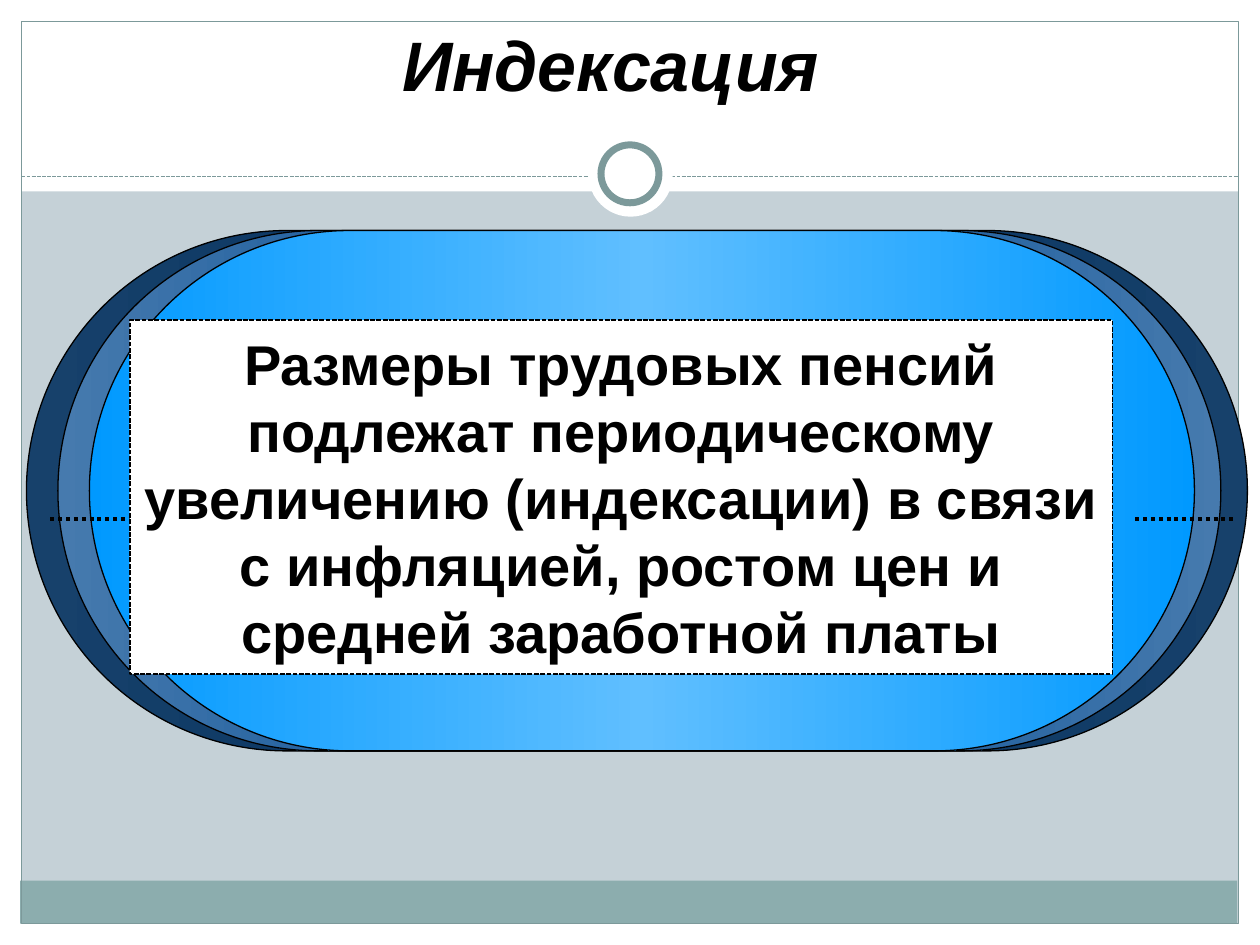
import copy

import lxml.etree
import pptx
import pptx.dml.color
import pptx.enum.dml
import pptx.enum.shapes
import pptx.enum.text
import pptx.oxml.ns
import pptx.util
from pptx.util import Inches

RGBColor = pptx.dml.color.RGBColor
MSO_SHAPE = pptx.enum.shapes.MSO_SHAPE
DASH = pptx.enum.dml.MSO_LINE
qn = pptx.oxml.ns.qn

BACKGROUND = RGBColor(0xC5, 0xD1, 0xD7)
WHITE = RGBColor(0xFF, 0xFF, 0xFF)
BLACK = RGBColor(0x00, 0x00, 0x00)
TEAL = RGBColor(0x8C, 0xAD, 0xAE)
FRAME = RGBColor(0x7C, 0x99, 0x9A)
NAVY_EDGE, NAVY_MID = RGBColor(0x17, 0x41, 0x6B), RGBColor(0x00, 0x2E, 0x5C)
BLUE_EDGE, BLUE_MID = RGBColor(0x46, 0x7A, 0xAE), RGBColor(0x00, 0x48, 0x90)
SKY_EDGE, SKY_MID = RGBColor(0x00, 0x99, 0xFF), RGBColor(0x60, 0xBF, 0xFF)

prs = pptx.Presentation()
prs.slide_width, prs.slide_height = Inches(10), Inches(7.5)
s = prs.slides.add_slide(prs.slide_layouts[6])
s.background.fill.solid()
s.background.fill.fore_color.rgb = BACKGROUND


def add_shape(kind, box, fill=None, line=None, width=0.75):
    sp = s.shapes.add_shape(kind, *[Inches(v) for v in box])
    sp.shadow.inherit = False
    if fill is None:
        sp.fill.background()
    else:
        sp.fill.solid()
        sp.fill.fore_color.rgb = fill
    if line is None:
        sp.line.fill.background()
    else:
        sp.line.color.rgb = line
        sp.line.width = pptx.util.Pt(width)
    return sp


def add_line(x1, x2, y, color, width, dash):
    ln = s.shapes.add_connector(pptx.enum.shapes.MSO_CONNECTOR.STRAIGHT,
                                Inches(x1), Inches(y), Inches(x2), Inches(y))
    ln.line.color.rgb = color
    ln.line.width = pptx.util.Pt(width)
    ln.line.dash_style = dash
    lxml.etree.SubElement(ln._element.spPr, qn("a:effectLst"))


# White margins, header and teal footer band
for box, color in [
    ((0, 7.33, 10, 0.17), WHITE),
    ((0, 0, 10, 1.52), WHITE),
    ((0, 0, 0.17, 7.5), WHITE),
    ((9.83, 0, 0.17, 7.5), WHITE),
    ((0.16, 6.99, 9.66, 0.34), TEAL),
]:
    add_shape(MSO_SHAPE.RECTANGLE, box, color)

# Frame, header rule and ring
add_shape(MSO_SHAPE.RECTANGLE, (0.17, 0.17, 9.66, 7.16), line=FRAME)
add_line(0.17, 9.83, 1.4, FRAME, 0.75, DASH.SQUARE_DOT)
add_shape(MSO_SHAPE.OVAL, (4.67, 1.05, 0.67, 0.67), WHITE)
add_shape(MSO_SHAPE.OVAL, (4.77, 1.15, 0.46, 0.46), WHITE, FRAME, 4)

# Nested capsules, each lit from the middle
for left, width, edge, mid in [
    (0.21, 9.69, NAVY_EDGE, NAVY_MID),
    (0.46, 9.23, BLUE_EDGE, BLUE_MID),
    (0.71, 8.77, SKY_EDGE, SKY_MID),
]:
    sp = add_shape(MSO_SHAPE.ROUNDED_RECTANGLE, (left, 1.83, width, 4.13), line=BLACK)
    sp.adjustments[0] = 0.5
    sp.fill.gradient()
    sp.fill.gradient_angle = 0
    stops = sp._element.spPr.find(qn("a:gradFill")).find(qn("a:gsLst"))
    stops.append(copy.deepcopy(stops[-1]))
    for stop, position, color in zip(sp.fill.gradient_stops, (0, 0.5, 1), (edge, mid, edge)):
        stop.position = position
        stop.color.rgb = color

# Dotted side marks
for x in (0.4, 9.01):
    add_line(x, x + 0.79, 4.12, BLACK, 2.25, DASH.ROUND_DOT)

# Statement box and title
statement = add_shape(MSO_SHAPE.RECTANGLE, (1.03, 2.54, 7.8, 2.81), WHITE, BLACK, 0.9)
statement.line.dash_style = DASH.SQUARE_DOT
title = s.shapes.add_textbox(Inches(1.22), Inches(0.12), Inches(7.25), Inches(0.77))
for sp, text, size, italic in [
    (statement, "Размеры трудовых пенсий подлежат периодическому увеличению "
     "(индексации) в связи с инфляцией, ростом цен и средней заработной платы", 32, False),
    (title, "Индексация", 40, True),
]:
    tf = sp.text_frame
    tf.word_wrap = True
    tf.vertical_anchor = pptx.enum.text.MSO_ANCHOR.MIDDLE
    tf.text = text
    p = tf.paragraphs[0]
    p.alignment = pptx.enum.text.PP_ALIGN.CENTER
    font = p.runs[0].font
    font.name = "Arial"
    font.size = pptx.util.Pt(size)
    font.bold = True
    font.italic = italic
    font.color.rgb = BLACK

prs.save("out.pptx")
